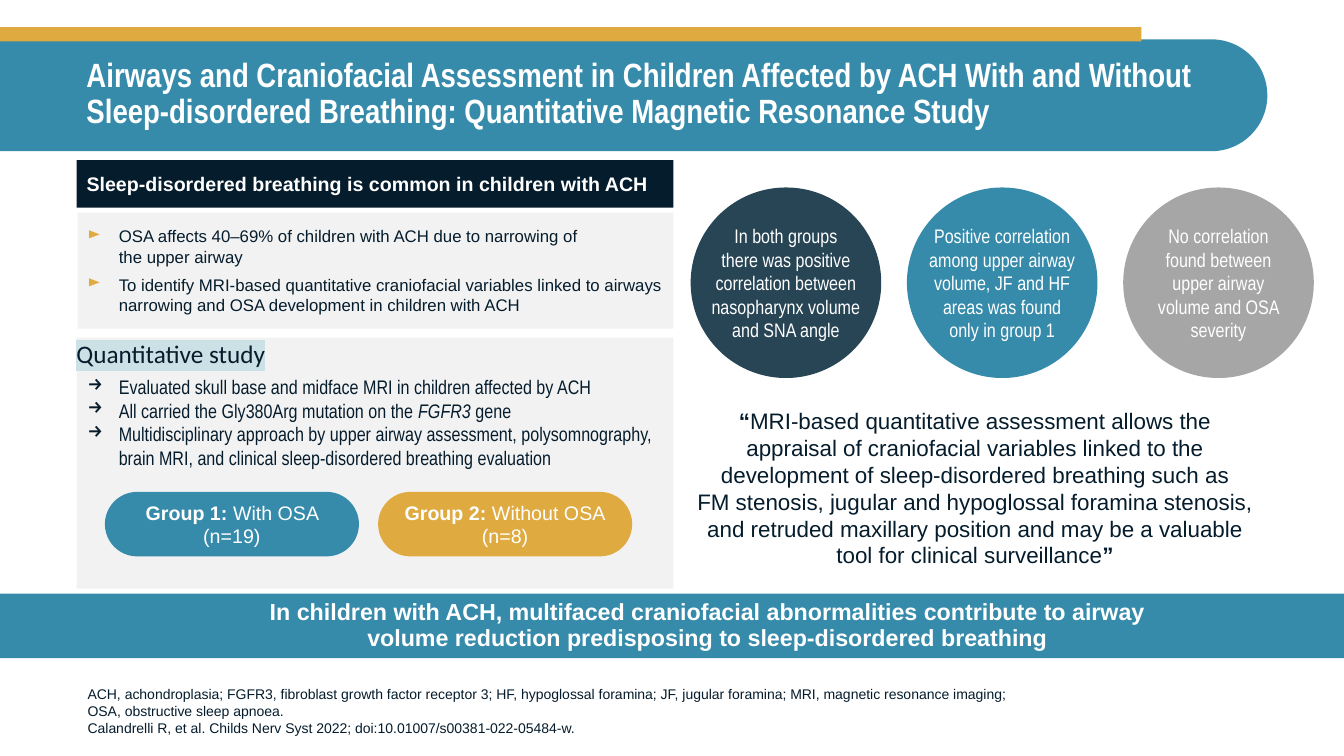
from dataclasses import dataclass

from lxml import etree
from pptx import Presentation
from pptx.dml.color import RGBColor
from pptx.enum.shapes import MSO_SHAPE as SHAPE
from pptx.enum.text import MSO_ANCHOR as ANCHOR, PP_ALIGN as ALIGN
from pptx.oxml.ns import qn
from pptx.util import Inches, Pt

TEAL, GOLD, NAVY, SLATE = "368BAB", "DFAA40", "051C2C", "274554"
PALE, GREY, WHITE, HIGHLIGHT = "F2F2F2", "A6A6A6", "FFFFFF", "CCE1E6"
ARIAL, NARROW, CALIBRI = "Arial", "Arial Narrow", "Calibri"


@dataclass
class Run:
    text: str
    bold: bool = False
    italic: bool = False
    highlight: str = ""


@dataclass
class Style:
    size: float
    color: str = NAVY
    font: str = ARIAL
    align: ALIGN = ALIGN.LEFT
    anchor: ANCHOR = ANCHOR.MIDDLE
    line_spacing: float = 1.0
    space_after: float = 0
    indent: float = 0
    bullet: str = ""
    bullet_color: str = NAVY
    inset: bool = True
    wrap: bool = True


@dataclass
class Group:
    color: str
    paragraphs: list[list[Run]]


@dataclass
class Finding:
    color: str
    text: str
    wrap: bool = False


def rgb(color: str) -> RGBColor:
    return RGBColor.from_string(color)


def add_color(parent, tag: str, color: str):
    el = etree.SubElement(parent, qn(tag))
    etree.SubElement(el, qn("a:srgbClr")).set("val", color)
    return el


def add_bullet(p, style: Style) -> None:
    pPr = p._p.get_or_add_pPr()
    pPr.set("marL", str(Inches(style.indent)))
    if style.bullet:
        pPr.set("indent", str(-Inches(style.indent)))
        add_color(pPr, "a:buClr", style.bullet_color)
        etree.SubElement(pPr, qn("a:buChar")).set("char", style.bullet)


def add_run(p, run: Run, style: Style) -> None:
    """Add a run, turning each newline into a line break."""
    for i, line in enumerate(run.text.split("\n")):
        if i:
            p.add_line_break()
        r = p.add_run()
        r.text = line
        r.font.size = Pt(style.size)
        r.font.name = style.font
        r.font.bold = run.bold
        r.font.italic = run.italic
        r.font.color.rgb = rgb(style.color)
        if run.highlight:
            rPr = r.font._element
            mark = add_color(rPr, "a:highlight", run.highlight)
            rPr.find(qn("a:solidFill")).addnext(mark)


def write(sp, paragraphs: list[list[Run]], style: Style) -> None:
    tf = sp.text_frame
    tf.word_wrap = style.wrap
    tf.vertical_anchor = style.anchor
    if not style.inset:
        tf.margin_left = tf.margin_right = tf.margin_top = tf.margin_bottom = 0
    for i, runs in enumerate(paragraphs):
        p = tf.add_paragraph() if i else tf.paragraphs[0]
        p.alignment = style.align
        p.line_spacing = style.line_spacing
        p.space_after = Pt(style.space_after)
        add_bullet(p, style)
        for run in runs:
            add_run(p, run, style)


def add_block(s, kind: SHAPE, x: float, y: float, w: float, h: float, color: str):
    sp = s.shapes.add_shape(kind, Inches(x), Inches(y), Inches(w), Inches(h))
    sp.shadow.inherit = False
    sp.fill.solid()
    sp.fill.fore_color.rgb = rgb(color)
    sp.line.fill.background()
    return sp


def add_text(s, x: float, y: float, w: float, h: float,
             paragraphs: list[list[Run]], style: Style) -> None:
    box = s.shapes.add_textbox(Inches(x), Inches(y), Inches(w), Inches(h))
    write(box, paragraphs, style)


def add_header(s) -> None:
    length, depth, top = 12.57, 1.11, 0.39
    band = add_block(s, SHAPE.ROUND_2_SAME_RECTANGLE, (length - depth) / 2,
                     top + (depth - length) / 2, depth, length, TEAL)
    band.rotation = 270
    band.adjustments[0], band.adjustments[1] = 0, 0.5
    add_block(s, SHAPE.RECTANGLE, 0, 0.27, 11.32, 0.14, GOLD)
    title = ("Airways and Craniofacial Assessment in Children Affected by ACH With and Without "
             "Sleep‑disordered Breathing: Quantitative Magnetic Resonance Study")
    add_text(s, 0.76, top, 11.94, 1.1, [[Run(title, bold=True)]],
             Style(24, WHITE, NARROW, line_spacing=0.9))


def add_background(s) -> None:
    heading = add_block(s, SHAPE.RECTANGLE, 0.76, 1.59, 5.92, 0.47, NAVY)
    write(heading, [[Run("Sleep-disordered breathing is common in children with ACH", bold=True)]],
          Style(14, WHITE))
    panel = add_block(s, SHAPE.RECTANGLE, 0.77, 2.11, 5.91, 1.15, PALE)
    write(panel, [
        [Run("OSA affects 40–69% of children with ACH due to narrowing of\nthe upper airway")],
        [Run("To identify MRI-based quantitative craniofacial variables linked to airways "
             "narrowing and OSA development in children with ACH")],
    ], Style(12, space_after=6, indent=0.31, bullet="►", bullet_color=GOLD))


def add_study(s) -> None:
    add_block(s, SHAPE.RECTANGLE, 0.76, 3.35, 5.92, 2.49, PALE)
    add_text(s, 0.66, 3.31, 3.05, 0.4, [[Run("Quantitative study", highlight=HIGHLIGHT)]],
             Style(18, font=CALIBRI, anchor=ANCHOR.TOP))
    add_text(s, 0.77, 3.67, 5.92, 1.04, [
        [Run("Evaluated skull base and midface MRI in children affected by ACH")],
        [Run("All carried the Gly380Arg mutation on the "), Run("FGFR3", italic=True), Run(" gene")],
        [Run("Multidisciplinary approach by upper airway assessment, polysomnography, "
             "brain MRI, and clinical sleep-disordered breathing evaluation")],
    ], Style(14, font=NARROW, anchor=ANCHOR.TOP, indent=0.31, bullet="→"))
    groups = [
        Group(TEAL, [[Run("Group 1: ", bold=True), Run("With OSA (n=19)")]]),
        Group(GOLD, [[Run("Group 2: ", bold=True), Run("Without OSA")], [Run("(n=8)")]]),
    ]
    for i, group in enumerate(groups):
        pill = add_block(s, SHAPE.ROUNDED_RECTANGLE, 1.04 + 2.71 * i, 4.88, 2.52, 0.64, group.color)
        pill.adjustments[0] = 0.5
        write(pill, group.paragraphs, Style(14, WHITE, align=ALIGN.CENTER))


def add_findings(s) -> None:
    findings = [
        Finding(SLATE, "In both groups\nthere was positive\ncorrelation between\n"
                       "nasopharynx volume\nand SNA angle"),
        Finding(TEAL, "Positive correlation\namong upper airway\nvolume, JF and HF\n"
                      "areas was found\nonly in group 1"),
        Finding(GREY, "No correlation found between upper airway volume and OSA severity", wrap=True),
    ]
    for i, finding in enumerate(findings):
        circle = add_block(s, SHAPE.OVAL, 6.85 + 2.145 * i, 1.86, 1.89, 1.89, finding.color)
        write(circle, [[Run(finding.text)]],
              Style(14, WHITE, NARROW, ALIGN.CENTER, inset=False, wrap=finding.wrap))
    quote = ("MRI-based quantitative assessment allows the appraisal of craniofacial variables "
             "linked to the development of sleep-disordered breathing such as\n"
             "FM stenosis, jugular and hypoglossal foramina stenosis, and retruded maxillary "
             "position and may be a valuable tool for clinical surveillance")
    add_text(s, 6.77, 3.99, 5.8, 1.72, [[Run("“", bold=True), Run(quote), Run("”", bold=True)]],
             Style(16, align=ALIGN.CENTER, anchor=ANCHOR.TOP))


def add_conclusion(s) -> None:
    band = add_block(s, SHAPE.RECTANGLE, 0, 5.89, 13.33, 0.64, TEAL)
    write(band, [[Run("In children with ACH, multifaced craniofacial abnormalities contribute to airway\n"
                      "volume reduction predisposing to sleep-disordered breathing", bold=True)]],
          Style(16.6, WHITE, align=ALIGN.CENTER, line_spacing=0.9, indent=0.69))


def add_footnotes(s) -> None:
    add_text(s, 0.77, 6.71, 9.88, 0.64, [
        [Run("ACH, achondroplasia; FGFR3, fibroblast growth factor receptor 3; HF, hypoglossal foramina; "
             "JF, jugular foramina; MRI, magnetic resonance imaging;\nOSA, obstructive sleep apnoea.")],
        [Run("Calandrelli R, et al. Childs Nerv Syst 2022; doi:10.01007/s00381-022-05484-w.")],
    ], Style(10, anchor=ANCHOR.BOTTOM))


def main() -> None:
    prs = Presentation()
    prs.slide_width, prs.slide_height = Inches(13.33), Inches(7.5)
    s = prs.slides.add_slide(prs.slide_layouts[6])
    for add_part in (add_header, add_background, add_study, add_findings,
                     add_conclusion, add_footnotes):
        add_part(s)
    prs.save("out.pptx")


if __name__ == "__main__":
    main()
